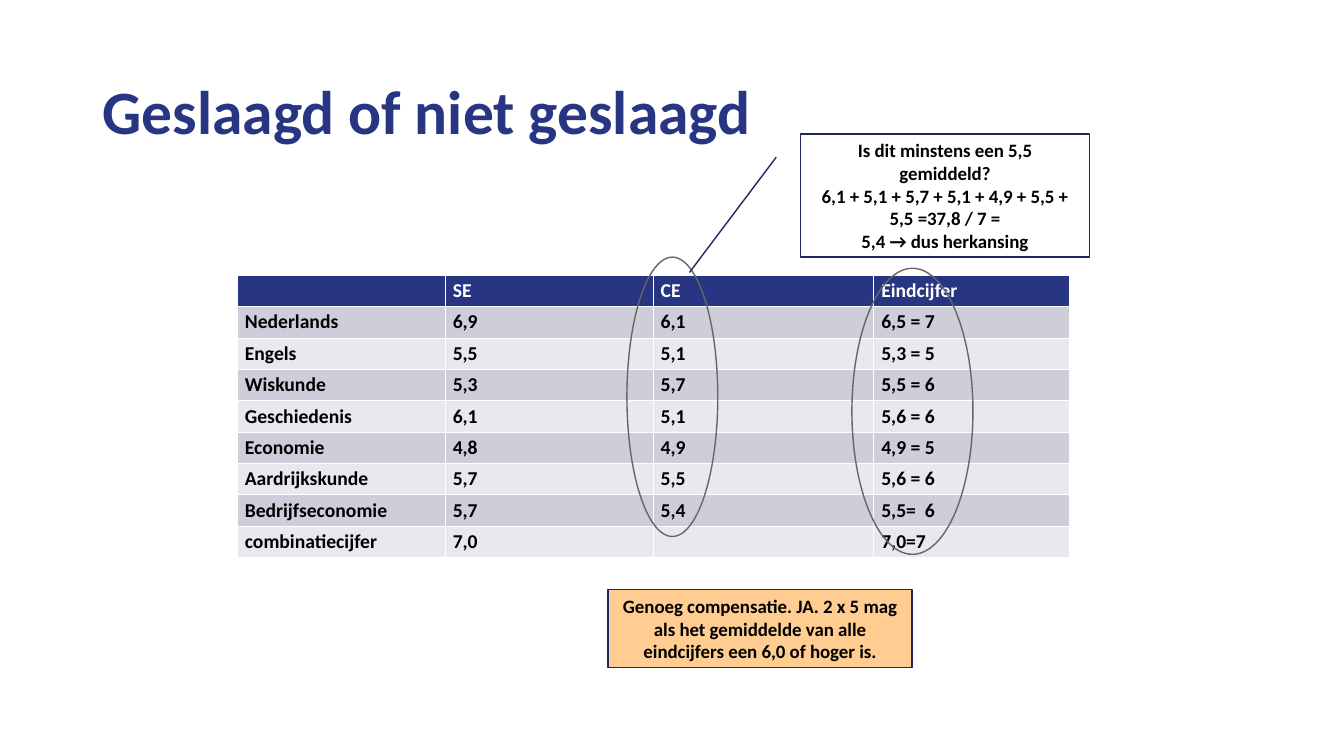
import pptx
import pptx.util
import pptx.dml.color
import pptx.enum.shapes
import pptx.enum.text

Cm = pptx.util.Cm
Pt = pptx.util.Pt
Shape = pptx.enum.shapes.MSO_SHAPE
Align = pptx.enum.text.PP_ALIGN
Anchor = pptx.enum.text.MSO_ANCHOR

FONT = "Calibri"
COLORS = {
    "navy": "283583",
    "edge": "1E2761",
    "ring": "666666",
    "odd": "CDCED9",
    "even": "E8E8ED",
    "note": "FFCC92",
    "white": "FFFFFF",
    "black": "000000",
}
GRADES = [
    ["", "SE", "CE", "Eindcijfer"],
    ["Nederlands", "6,9", "6,1", "6,5 = 7"],
    ["Engels", "5,5", "5,1", "5,3 = 5"],
    ["Wiskunde", "5,3", "5,7", "5,5 = 6"],
    ["Geschiedenis", "6,1", "5,1", "5,6 = 6"],
    ["Economie", "4,8", "4,9", "4,9 = 5"],
    ["Aardrijkskunde", "5,7", "5,5", "5,6 = 6"],
    ["Bedrijfseconomie", "5,7", "5,4", "5,5=  6"],
    ["combinatiecijfer", "7,0", "", "7,0=7"],
]
WIDTHS = [5.24, 5.24, 5.56, 4.93]
CHECK = [
    "Is dit minstens een 5,5 gemiddeld?",
    "6,1 + 5,1 + 5,7 + 5,1 + 4,9 + 5,5 + 5,5 =37,8 / 7 =",
    "5,4 → dus herkansing",
]
RESULT = [
    "Genoeg compensatie. JA. 2 x 5 mag als het gemiddelde van alle "
    "eindcijfers een 6,0 of hoger is."
]


def color(name):
    return pptx.dml.color.RGBColor.from_string(COLORS[name])


def style(frame, size, tint, align):
    for para in frame.paragraphs:
        para.alignment = align
        for run in para.runs:
            run.font.name = FONT
            run.font.size = Pt(size)
            run.font.bold = True
            run.font.color.rgb = color(tint)


def add_title(slide, box, text):
    title = slide.shapes.title
    title.left, title.top, title.width, title.height = map(Cm, box)
    frame = title.text_frame
    frame.text = text
    frame.vertical_anchor = Anchor.MIDDLE
    frame.paragraphs[0].line_spacing = 0.9
    style(frame, 44, "navy", Align.LEFT)


def add_grades(slide, box):
    size = len(GRADES), len(WIDTHS)
    table = slide.shapes.add_table(*size, *map(Cm, box)).table
    for col, width in zip(table.columns, WIDTHS):
        col.width = Cm(width)
    for i, values in enumerate(GRADES):
        table.rows[i].height = Cm(box[3] / len(GRADES))
        fill = "navy" if i == 0 else "odd" if i % 2 else "even"
        tint = "black" if i else "white"
        for j, value in enumerate(values):
            cell = table.cell(i, j)
            cell.fill.solid()
            cell.fill.fore_color.rgb = color(fill)
            cell.margin_left = cell.margin_right = Cm(0.19)
            cell.margin_top = cell.margin_bottom = Cm(0.09)
            if value:
                cell.text_frame.text = value
                style(cell.text_frame, 14, tint, Align.LEFT)
            else:
                para = cell.text_frame.paragraphs[0]
                para._p.get_or_add_endParaRPr().set("sz", "1400")


def add_form(slide, kind, box, line, fill=None):
    form = slide.shapes.add_shape(kind, *map(Cm, box))
    form.shadow.inherit = False
    form.line.color.rgb = color(line)
    form.line.width = Pt(1)
    if fill:
        form.fill.solid()
        form.fill.fore_color.rgb = color(fill)
    else:
        form.fill.background()
    return form


def add_ring(slide, box):
    add_form(slide, Shape.OVAL, box, "ring")


def add_note(slide, kind, box, lines, fill=None):
    frame = add_form(slide, kind, box, "edge", fill).text_frame
    frame.word_wrap = True
    frame.vertical_anchor = Anchor.MIDDLE
    frame.text = "\n".join(lines)
    style(frame, 13.5, "black", Align.CENTER)


def main():
    deck = pptx.Presentation()
    deck.slide_width, deck.slide_height = Cm(33.87), Cm(19.05)
    slide = deck.slides.add_slide(deck.slide_layouts[5])
    add_title(slide, (2.33, 1.04, 29.21, 3.68), "Geslaagd of niet geslaagd")
    add_grades(slide, (5.98, 6.94, sum(WIDTHS), 7.11))
    add_ring(slide, (15.8, 6.48, 2.29, 7.04))
    add_note(slide, Shape.LINE_CALLOUT_1, (20.17, 3.38, 7.29, 3.1), CHECK)
    add_ring(slide, (20.17 + 1.3, 6.76, 3.05, 7.21))
    add_note(slide, Shape.RECTANGLE, (15.32, 14.86, 7.67, 1.96), RESULT, "note")
    deck.save("out.pptx")


if __name__ == "__main__":
    main()
